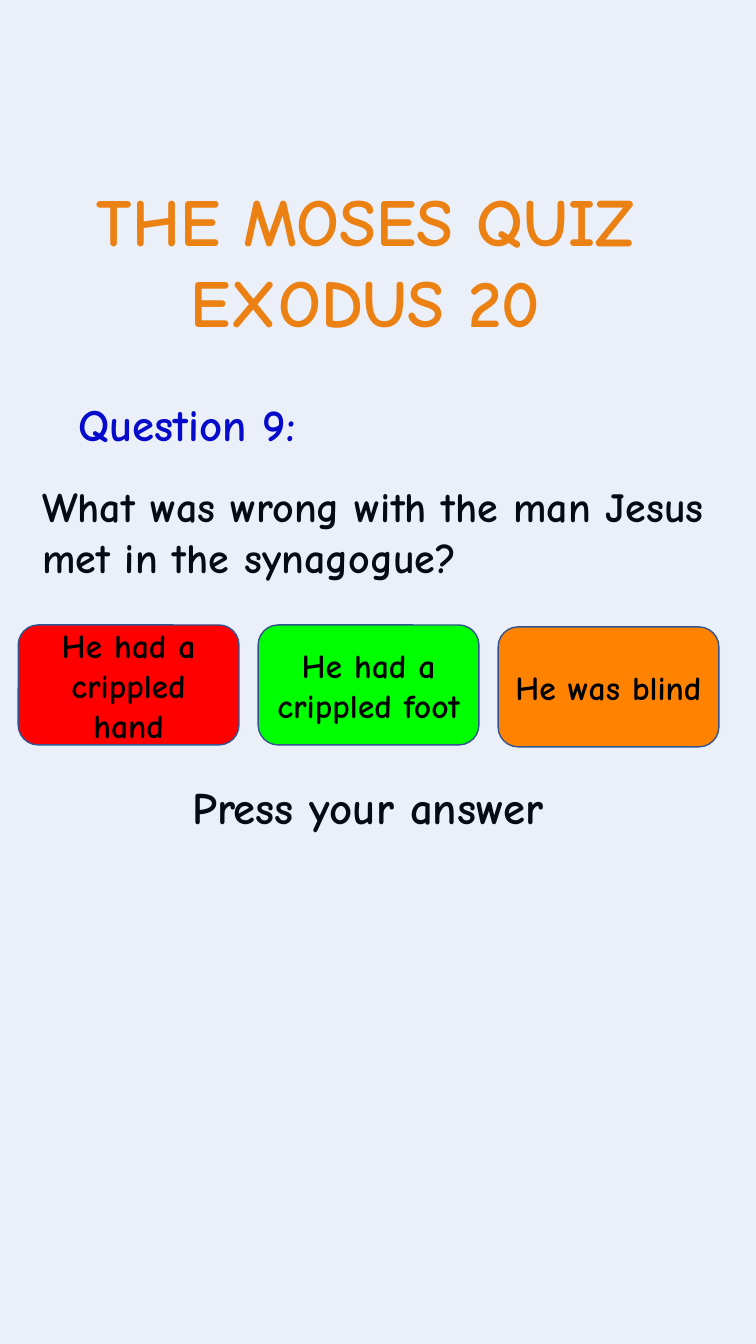
from dataclasses import dataclass

from lxml.etree import SubElement
from pptx import Presentation
from pptx.dml.color import RGBColor
from pptx.enum.shapes import MSO_SHAPE
from pptx.enum.text import MSO_ANCHOR, MSO_AUTO_SIZE, PP_ALIGN
from pptx.oxml.ns import qn
from pptx.util import Pt


@dataclass(frozen=True)
class Theme:
    font: str = "Comic Neue"
    orange: str = "FF8200"
    red: str = "FF0000"
    green: str = "00FF00"
    navy: str = "0000CC"
    ink: str = "000000"
    veil: str = "4472C4"
    outline: str = "325491"
    title_size: int = 48
    heading_size: int = 32
    question_size: int = 30
    answer_size: int = 24


THEME = Theme()


def place(shape, left, top, width, height):
    shape.left, shape.top = Pt(left), Pt(top)
    shape.width, shape.height = Pt(width), Pt(height)


def write(shape, lines, size, color, align=PP_ALIGN.LEFT, anchor=MSO_ANCHOR.TOP):
    frame = shape.text_frame
    frame.text = "\n".join(lines)
    frame.word_wrap = True
    frame.auto_size = MSO_AUTO_SIZE.NONE
    frame.vertical_anchor = anchor
    for paragraph in frame.paragraphs:
        paragraph.alignment = align
        paragraph.space_before = Pt(0)
        paragraph.font.name = THEME.font
        paragraph.font.size = Pt(size)
        paragraph.font.bold = True
        paragraph.font.color.rgb = RGBColor.from_string(color)
    return frame


def add_label(slide, box, text, color, align=PP_ALIGN.LEFT):
    label = slide.shapes.add_textbox(*map(Pt, box))
    return write(label, [text], THEME.heading_size, color, align)


def add_panel(slide, kind, box, fill):
    panel = slide.shapes.add_shape(kind, *map(Pt, box))
    panel.shadow.inherit = False
    panel.fill.solid()
    panel.fill.fore_color.rgb = RGBColor.from_string(fill)
    panel.line.color.rgb = RGBColor.from_string(THEME.outline)
    panel.line.width = Pt(1)
    return panel


def add_veil(slide):
    veil = add_panel(slide, MSO_SHAPE.RECTANGLE, (-31, -16, 587.5, 992), THEME.veil)
    color = veil.fill._xPr.find(qn("a:solidFill"))[0]
    SubElement(color, qn("a:alpha"), val="10000")


def add_answer(slide, left, top, text, fill):
    answer = add_panel(slide, MSO_SHAPE.ROUNDED_RECTANGLE, (left, top, 157.7, 85.7), fill)
    write(answer, [text], THEME.answer_size, THEME.ink, PP_ALIGN.CENTER, MSO_ANCHOR.MIDDLE)


def main():
    presentation = Presentation()
    presentation.slide_width, presentation.slide_height = Pt(540), Pt(960)
    slide = presentation.slides.add_slide(presentation.slide_layouts[0])

    title = slide.shapes.title
    place(title, 21.6, 124.6, 496, 123.8)
    heading = write(title, ["THE MOSES QUIZ", "EXODUS 20"], THEME.title_size,
                    THEME.orange, PP_ALIGN.CENTER)
    heading.margin_right = Pt(24)

    question = slide.placeholders[1]
    place(question, 23, 339.8, 505.4, 85.7)
    wording = write(question, ["What was wrong with the man Jesus met in the synagogue?"],
                    THEME.question_size, THEME.ink)
    wording.paragraphs[0].line_spacing = Pt(36)
    wording.paragraphs[0].space_before = Pt(7.5)

    prompt = add_label(slide, (130.3, 558, 303.8, 51.8), "Press your answer", THEME.ink)
    prompt.paragraphs[0].line_spacing = 0.9
    prompt.paragraphs[0].space_before = Pt(7.5)
    add_label(slide, (33.8, 280, 199.4, 46), "Question 9:", THEME.navy, PP_ALIGN.CENTER)

    add_veil(slide)
    answers = [
        ("He had a crippled hand", THEME.red, 446.4),
        ("He had a crippled foot", THEME.green, 446.4),
        ("He was blind", THEME.orange, 447.8),
    ]
    for column, (text, fill, top) in enumerate(answers):
        add_answer(slide, 13 + column * 171.4, top, text, fill)

    presentation.save("out.pptx")


if __name__ == "__main__":
    main()
